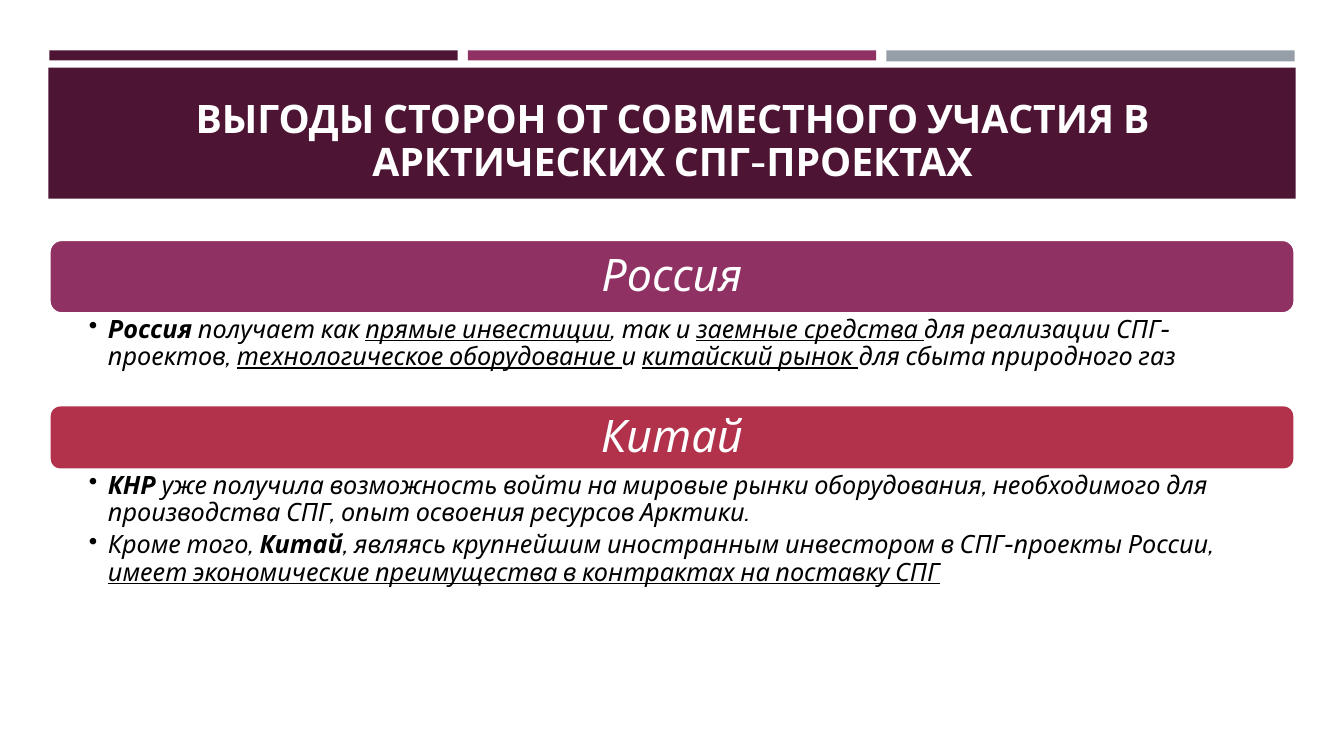
import pptx
import pptx.util
import pptx.dml.color
import pptx.enum.shapes
import pptx.enum.text
import lxml.etree

Inches, Pt = pptx.util.Inches, pptx.util.Pt
SHAPES = pptx.enum.shapes.MSO_SHAPE
ANCHORS = pptx.enum.text.MSO_ANCHOR
CENTER = pptx.enum.text.PP_ALIGN.CENTER

COLOURS = {"plum": "4D1434", "magenta": "903163", "grey": "969FA7",
           "red": "B2324B", "white": "FFFFFF", "black": "000000"}
FONT = "Cabin"
BOLD, UNDERLINED, PLAIN = {"bold": True}, {"underline": True}, {}

TITLE = "ВЫГОДЫ СТОРОН ОТ СОВМЕСТНОГО УЧАСТИЯ В АРКТИЧЕСКИХ СПГ-ПРОЕКТАХ"
STRIPES = [("plum", 0.1), ("magenta", 0.1), ("grey", 0.11)]
COUNTRIES = [
    {"name": "Россия", "colour": "magenta", "top": 2.38, "height": 0.73,
     "benefits_height": 0.92, "benefits": [
         [("Россия", BOLD), (" получает как ", PLAIN),
          ("прямые инвестиции", UNDERLINED), (", так и ", PLAIN),
          ("заемные средства ", UNDERLINED),
          ("для реализации СПГ-проектов, ", PLAIN),
          ("технологическое оборудование ", UNDERLINED), ("и ", PLAIN),
          ("китайский рынок ", UNDERLINED),
          ("для сбыта природного газ", PLAIN)]]},
    {"name": "Китай", "colour": "red", "top": 4.02, "height": 0.64,
     "benefits_height": 1.23, "benefits": [
         [("КНР", BOLD),
          (" уже получила возможность войти на мировые рынки оборудования, "
           "необходимого для производства СПГ, опыт освоения ресурсов Арктики.", PLAIN)],
         [("Кроме того, ", PLAIN), ("Китай", BOLD),
          (", являясь крупнейшим иностранным инвестором в СПГ-проекты России,", PLAIN),
          (" имеет экономические преимущества в контрактах на поставку СПГ", UNDERLINED)]]},
]
LEFT, WIDTH = 0.49, 12.35
STRIPE_WIDTH, STRIPE_STEP = 4.05, 4.15
BAND_INSET = 0.03


def rgb(name):
    return pptx.dml.color.RGBColor.from_string(COLOURS[name])


def add_block(slide, kind, box, fill, outline=None):
    block = slide.shapes.add_shape(kind, *map(Inches, box))
    block.shadow.inherit = False
    block.fill.solid()
    block.fill.fore_color.rgb = rgb(fill)
    if outline:
        block.line.color.rgb = rgb(outline)
        block.line.width = Pt(1.75)
    else:
        block.line.fill.background()


def add_frame(slide, box, anchor, insets):
    frame = slide.shapes.add_textbox(*map(Inches, box)).text_frame
    frame.word_wrap = True
    frame.vertical_anchor = anchor
    for side, inset in zip(("left", "top", "right", "bottom"), insets):
        setattr(frame, f"margin_{side}", Inches(inset))
    return frame


def add_runs(paragraph, runs, size, colour, after=0, **base):
    """Fill a paragraph with (text, format) runs over a shared base format."""
    paragraph.line_spacing = 0.9
    paragraph.space_after = Pt(after)
    for text, extra in runs:
        run = paragraph.add_run()
        run.text = text
        run.font.color.rgb = rgb(colour)
        for key, value in {"name": FONT, "size": Pt(size), **base, **extra}.items():
            setattr(run.font, key, value)


def add_bullet(paragraph):
    properties = paragraph._p.get_or_add_pPr()
    properties.set("marL", str(Inches(0.19)))
    properties.set("indent", str(-Inches(0.19)))
    bullet = lxml.etree.SubElement(properties, pptx.oxml.ns.qn("a:buChar"))
    bullet.set("char", "•")


def add_country(slide, country):
    top, height = country["top"], country["height"]
    add_block(slide, SHAPES.ROUNDED_RECTANGLE, (LEFT, top, WIDTH, height),
              country["colour"], "white")
    name_box = (LEFT + BAND_INSET, top + BAND_INSET,
                WIDTH - 2 * BAND_INSET, height - 2 * BAND_INSET)
    heading = add_frame(slide, name_box, ANCHORS.MIDDLE, [0.13] * 4).paragraphs[0]
    heading.alignment = CENTER
    add_runs(heading, [(country["name"], PLAIN)], 32, "white", 11.2, italic=True)

    benefits_box = (LEFT, top + height, WIDTH, country["benefits_height"])
    frame = add_frame(slide, benefits_box, ANCHORS.TOP, (0.39, 0.03, 0.14, 0.03))
    for index, runs in enumerate(country["benefits"]):
        paragraph = frame.add_paragraph() if index else frame.paragraphs[0]
        paragraph.level = 1
        add_runs(paragraph, runs, 18, "black", 3.6, italic=True)
        add_bullet(paragraph)


def main():
    deck = pptx.Presentation()
    deck.slide_width, deck.slide_height = Inches(13.33), Inches(7.5)
    slide = deck.slides.add_slide(deck.slide_layouts[6])

    for index, (colour, height) in enumerate(STRIPES):
        add_block(slide, SHAPES.RECTANGLE,
                  (LEFT + index * STRIPE_STEP, 0.5, STRIPE_WIDTH, height), colour)
    add_block(slide, SHAPES.RECTANGLE, (0.48, 0.67, 12.37, 1.3), "plum")
    title = add_frame(slide, (0.64, 0.77, 12.06, 1.11), ANCHORS.BOTTOM,
                      (0.1, 0.05, 0.1, 0.05)).paragraphs[0]
    title.alignment = CENTER
    add_runs(title, [(TITLE, PLAIN)], 28, "white", bold=True)

    for country in COUNTRIES:
        add_country(slide, country)
    deck.save("out.pptx")


if __name__ == "__main__":
    main()
